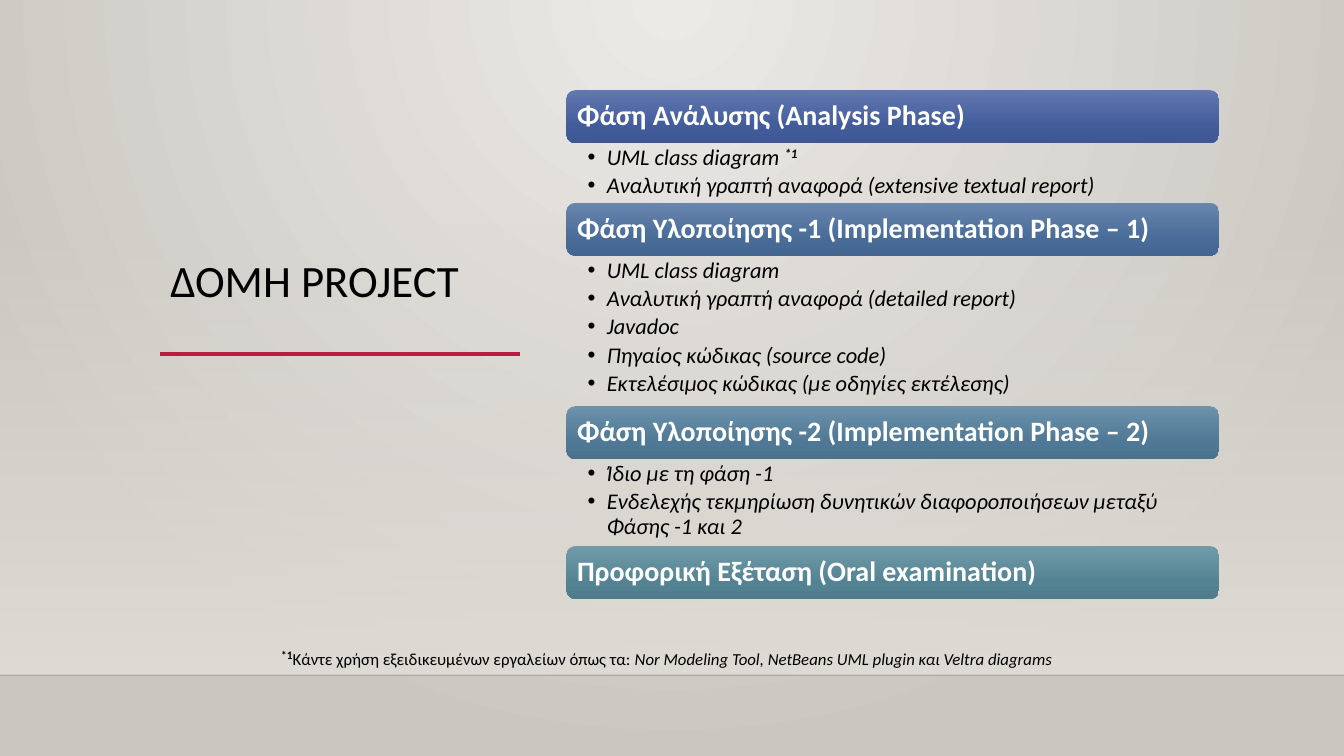
from lxml import etree
from pptx import Presentation
from pptx.dml.color import RGBColor
from pptx.enum.shapes import MSO_CONNECTOR as Link, MSO_SHAPE as Shape
from pptx.enum.text import MSO_ANCHOR as Anchor, PP_ALIGN as Align
from pptx.oxml.ns import qn
from pptx.util import Inches, Pt

WIDE, HIGH = Inches(13.33), Inches(7.5)
FONT = "Calibri"
LEFT, SPAN = 42.15, 48.55  # phase column, in % of the width
TOP, BAR = 11.93, 7  # first bar and bar height, in % of the height

# heading, gradient colours, list height in % of the slide, list items
PHASES = [
    ("Φάση Ανάλυσης (Analysis Phase)", ("6378B0", "425B9B", "3F5793"), 7.9,
     ["UML class diagram ", "Αναλυτική γραπτή αναφορά (extensive textual report)"]),
    ("Φάση Υλοποίησης -1 (Implementation Phase – 1)",
     ("6886AE", "486B98", "446690"), 19.9,
     ["UML class diagram", "Αναλυτική γραπτή αναφορά (detailed report)", "Javadoc",
      "Πηγαίος κώδικας (source code)",
      "Εκτελέσιμος κώδικας (με οδηγίες εκτέλεσης)"]),
    ("Φάση Υλοποίησης -2 (Implementation Phase – 2)",
     ("6D92AB", "4E7895", "4A728E"), 11.5,
     ["Ίδιο με τη φάση -1",
      "Ενδελεχής τεκμηρίωση δυνητικών διαφοροποιήσεων μεταξύ Φάσης -1 και 2"]),
    ("Προφορική Εξέταση (Oral examination)", ("729BA9", "538393", "4F7C8B"), 0, []),
]


def rgb(code):
    return RGBColor.from_string(code)


def area(x, y, w, h):
    """Turn shares of the slide, in %, into lengths."""
    return [int(part * side / 100)
            for part, side in zip((x, y, w, h), (WIDE, HIGH, WIDE, HIGH))]


def add(parent, tag, **attrs):
    node = etree.SubElement(parent, qn(tag))
    for key, value in attrs.items():
        node.set(key, str(value))
    return node


def blend(owner, stops, focus=None):
    """Swap the first solid fill for a gradient of (place, colour, alpha) stops."""
    solid = next(owner.iter(qn("a:solidFill")))
    grad = etree.Element(qn("a:gradFill"), rotWithShape="1")
    steps = add(grad, "a:gsLst")
    for place, code, alpha in stops:
        stop = add(steps, "a:gs", pos=place * 1000)
        tone = add(stop, "a:srgbClr", val=code)
        if alpha < 100:
            add(tone, "a:alpha", val=alpha * 1000)
    if focus:
        ring = add(grad, "a:path", path="circle")
        add(ring, "a:fillToRect", **{k: v * 1000 for k, v in zip("ltrb", focus)})
    else:
        add(grad, "a:lin", ang=5400000, scaled=0)
    solid.getparent().replace(solid, grad)


def add_block(slide, kind, box, stops):
    block = slide.shapes.add_shape(kind, *box)
    block.shadow.inherit = False
    block.line.fill.background()
    block.fill.solid()
    blend(block.element, stops)
    return block


def add_rule(slide, x, y, w, code, size, alpha=100):
    left, top, wide, _ = area(x, y, w, 0)
    rule = slide.shapes.add_connector(Link.STRAIGHT, left, top, left + wide, top)
    rule.line.color.rgb = rgb(code)
    rule.line.width = Pt(size)
    if alpha < 100:
        add(next(rule.element.iter(qn("a:srgbClr"))), "a:alpha", val=alpha * 1000)
    add(rule.element.spPr, "a:effectLst")


def add_run(para, text, size, code="000000", bold=False, slant=False, lift=0):
    run = para.add_run()
    run.text = text
    font = run.font
    font.name, font.size = FONT, Pt(size)
    font.bold, font.italic = bold, slant
    font.color.rgb = rgb(code)
    if lift:
        run._r.get_or_add_rPr().set("baseline", str(lift * 1000))


def set_frame(frame, anchor, left, top, right):
    frame.word_wrap = True
    frame.vertical_anchor = anchor
    frame.margin_left, frame.margin_right = Inches(left), Inches(right)
    frame.margin_top = frame.margin_bottom = Inches(top)


def add_bar(slide, y, text, codes):
    stops = [(place, code, 100) for place, code in zip((0, 69, 100), codes)]
    bar = add_block(slide, Shape.ROUNDED_RECTANGLE, area(LEFT, y, SPAN, BAR), stops)
    set_frame(bar.text_frame, Anchor.MIDDLE, 0.08, 0.08, 0.08)
    para = bar.text_frame.paragraphs[0]
    para.alignment, para.line_spacing = Align.LEFT, 0.9
    add_run(para, text, 20, "FFFFFF", bold=True)


def add_list(slide, y, h, items):
    frame = slide.shapes.add_textbox(*area(LEFT, y, SPAN, h)).text_frame
    set_frame(frame, Anchor.TOP, 0.21, 0.03, 0.16)
    for i, item in enumerate(items):
        para = frame.add_paragraph() if i else frame.paragraphs[0]
        props = para._p.get_or_add_pPr()
        props.set("marL", str(Inches(0.19)))
        props.set("indent", str(-Inches(0.19)))
        add(props, "a:buFont", typeface="Arial")
        add(props, "a:buChar", char="•")
        para.line_spacing, para.space_after = 0.9, Pt(3)
        add_run(para, item, 16, slant=True)
    return frame


def set_title(slide, text):
    title = slide.shapes.title
    title.left, title.top, title.width, title.height = area(11.93, 33.6, 26.86, 38.93)
    set_frame(title.text_frame, Anchor.TOP, 0.1, 0.05, 0.1)
    para = title.text_frame.paragraphs[0]
    para.alignment, para.line_spacing = Align.LEFT, 0.9
    add_run(para, text, 32)
    title.element.getparent().append(title.element)


def add_note(slide):
    frame = slide.shapes.add_textbox(*area(20.18, 84.8, 59.64, 4)).text_frame
    frame.word_wrap = False
    para = frame.paragraphs[0]
    para.space_after = Pt(6)
    add_run(para, "*1", 14, bold=True, lift=30)
    add_run(para, "Κάντε χρήση εξειδικευμένων εργαλείων όπως τα: ", 12)
    add_run(para, "Nor Modeling Tool, NetBeans UML plugin και Veltra diagrams", 12,
            slant=True)


def set_scene(slide):
    slide.background.fill.solid()
    blend(slide.element, [(0, "ECEAE7", 100), (100, "CAC7C1", 100)], (43, 0, 43, 100))
    add_block(slide, Shape.RECTANGLE, area(0, 29.47, 100, 59.87),
              [(0, "DFDBD5", 0), (100, "DFDBD5", 100)])
    add_rule(slide, 0, 89.33, 100, "000001", 1, 20)
    add_rule(slide, 11.88, 46.8, 26.82, "B71E42", 2.5)


def main():
    deck = Presentation()
    deck.slide_width, deck.slide_height = WIDE, HIGH
    slide = deck.slides.add_slide(deck.slide_layouts[5])
    set_scene(slide)
    set_title(slide, "ΔΟΜΗ PROJECT")
    y = TOP
    for i, (text, codes, h, items) in enumerate(PHASES):
        add_bar(slide, y, text, codes)
        y += BAR
        if items:
            frame = add_list(slide, y, h, items)
            if i == 0:
                add_run(frame.paragraphs[0], "*1", 16, bold=True, slant=True, lift=30)
        y += h
    add_note(slide)
    deck.save("out.pptx")


if __name__ == "__main__":
    main()
